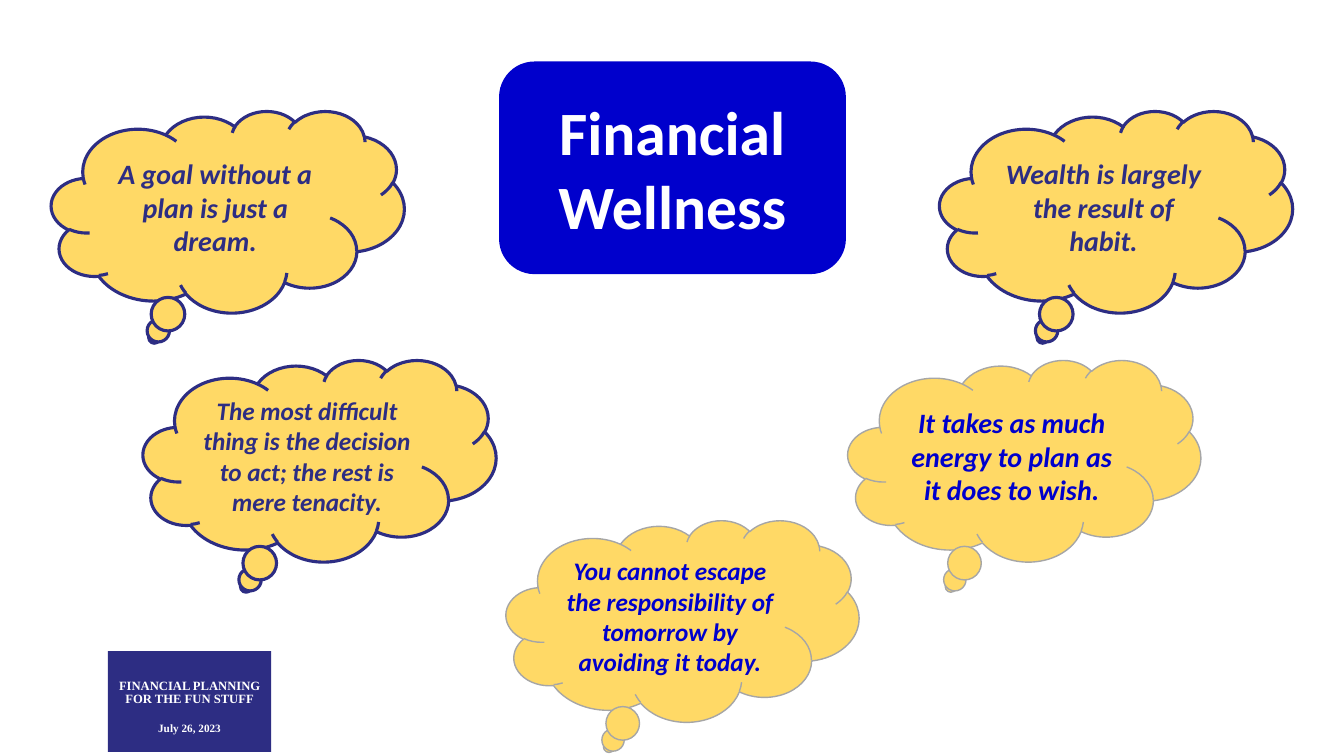
from pptx import Presentation
from pptx.dml.color import RGBColor
from pptx.enum.shapes import MSO_SHAPE
from pptx.enum.text import MSO_ANCHOR, PP_ALIGN
from pptx.util import Inches, Pt

RECTANGLE = MSO_SHAPE.RECTANGLE
ROUNDED = MSO_SHAPE.ROUNDED_RECTANGLE
CLOUD = MSO_SHAPE.CLOUD_CALLOUT
CENTER = PP_ALIGN.CENTER
MIDDLE = MSO_ANCHOR.MIDDLE
NAVY = RGBColor(0x2D, 0x2D, 0x83)
BLUE = RGBColor(0x00, 0x00, 0xCC)
GOLD = RGBColor(0xFF, 0xD9, 0x66)
GRAY = RGBColor(0xA6, 0xA6, 0xA6)
WHITE = RGBColor(0xFF, 0xFF, 0xFF)

SLIDE_W, SLIDE_H = 13.33, 7.5
CLOUD_W, CLOUD_H = 3.5, 2
OUTER, INNER = 0.51, 1.42
UPPER, LOWER = 1.1, 3.57

deck = Presentation()
deck.slide_width = Inches(SLIDE_W)
deck.slide_height = Inches(SLIDE_H)
slide = deck.slides.add_slide(deck.slide_layouts[6])


def add_panel(preset, box, fill, outline=None):
    panel = slide.shapes.add_shape(preset, *[Inches(length) for length in box])
    panel.shadow.inherit = False
    panel.fill.solid()
    panel.fill.fore_color.rgb = fill
    if outline:
        panel.line.color.rgb = outline[0]
        panel.line.width = Pt(outline[1])
    else:
        panel.line.fill.background()
    panel.text_frame.word_wrap = True
    panel.text_frame.vertical_anchor = MIDDLE
    return panel.text_frame


def write(paragraph, text, color, **font_format):
    paragraph.alignment = CENTER
    run = paragraph.add_run()
    run.text = text
    run.font.color.rgb = color
    for attribute, value in font_format.items():
        setattr(run.font, attribute, value)


event = add_panel(RECTANGLE, (1.07, 6.46, 1.62, 1), NAVY)
event.margin_top = Inches(0.16)
event_lines = [("FINANCIAL PLANNING FOR THE FUN STUFF", 9, 0), ("July 26, 2023", 8, 11.5)]
for index, (text, size, gap) in enumerate(event_lines):
    line = event.add_paragraph() if index else event.paragraphs[0]
    line.line_spacing = 0.9
    line.space_before = Pt(gap)
    write(line, text, WHITE, name="Times New Roman", size=Pt(size), bold=True)

title = add_panel(ROUNDED, (4.95, 0.61, 3.44, 2.11), BLUE)
write(title.paragraphs[0], "Financial Wellness", WHITE,
      name="Calibri", size=Pt(44), bold=True)

right_edge = SLIDE_W - CLOUD_W
navy_outline, gray_outline = (NAVY, 2.25), (GRAY, 1)
quotes = [
    ("A goal without a plan is just a dream.",
     OUTER, UPPER, 20, NAVY, navy_outline),
    ("The most difficult thing is the decision to act; the rest is mere tenacity.",
     INNER, LOWER, 18, NAVY, navy_outline),
    ("Wealth is largely the result of habit.",
     right_edge - OUTER, UPPER, 20, NAVY, navy_outline),
    ("It takes as much energy to plan as it does to wish.",
     right_edge - INNER, LOWER, 20, BLUE, gray_outline),
    ("You cannot escape the responsibility of tomorrow by avoiding it today.",
     5.02, 5.16, 18, BLUE, gray_outline),
]
for text, left, top, size, color, outline in quotes:
    thought = add_panel(CLOUD, (left, top, CLOUD_W, CLOUD_H), GOLD, outline)
    write(thought.paragraphs[0], text, color,
          name="Calibri", size=Pt(size), bold=True, italic=True)

deck.save("out.pptx")
